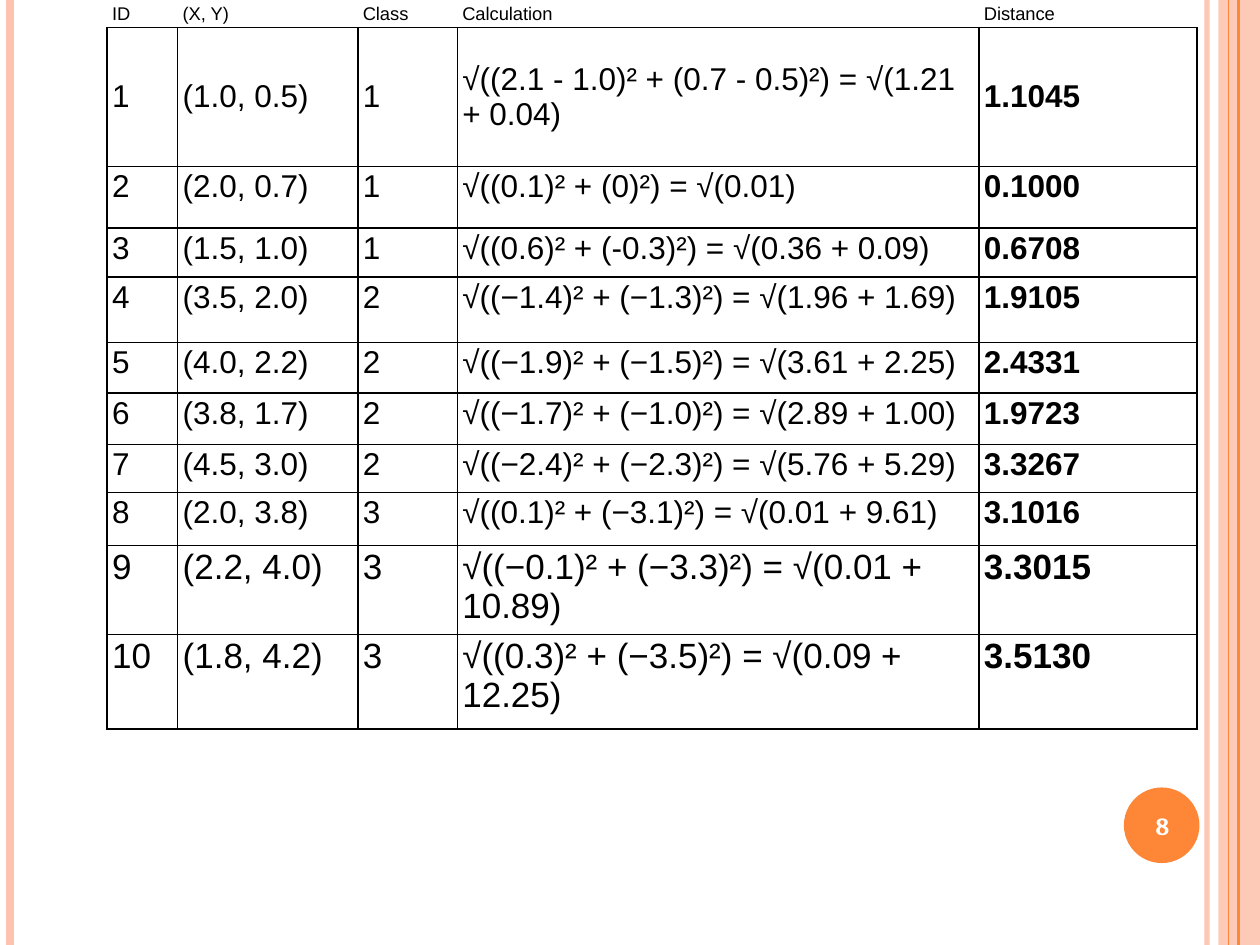
"""Build a slide with a table of point distances for a nearest-neighbour example."""
from lxml import etree
from pptx import Presentation
from pptx.dml.color import RGBColor
from pptx.enum.shapes import MSO_CONNECTOR, MSO_SHAPE
from pptx.enum.text import MSO_ANCHOR, PP_ALIGN
from pptx.oxml.ns import qn
from pptx.util import Inches, Pt

BLACK = RGBColor(0, 0, 0)
WHITE = RGBColor(255, 255, 255)
PEACH = RGBColor(0xFE, 0xC3, 0xAE)
ORANGE = RGBColor(0xFE, 0x86, 0x37)
STRAIGHT = MSO_CONNECTOR.STRAIGHT
RECT, OVAL = MSO_SHAPE.RECTANGLE, MSO_SHAPE.OVAL
MIDDLE, TOP = MSO_ANCHOR.MIDDLE, MSO_ANCHOR.TOP
CENTER = PP_ALIGN.CENTER

COLS = [0.56, 1.43, 0.79, 4.14, 1.73]
HEAD = ["ID", "(X, Y)", "Class", "Calculation", "Distance"]
ROWS = [
    (1.10, 18, ["1", "(1.0, 0.5)", "1", "√((2.1 - 1.0)² + (0.7 - 0.5)²) = √(1.21 + 0.04)", "1.1045"]),
    (0.49, 18, ["2", "(2.0, 0.7)", "1", "√((0.1)² + (0)²) = √(0.01)", "0.1000"]),
    (0.39, 18, ["3", "(1.5, 1.0)", "1", "√((0.6)² + (-0.3)²) = √(0.36 + 0.09)", "0.6708"]),
    (0.52, 18, ["4", "(3.5, 2.0)", "2", "√((−1.4)² + (−1.3)²) = √(1.96 + 1.69)", "1.9105"]),
    (0.40, 18, ["5", "(4.0, 2.2)", "2", "√((−1.9)² + (−1.5)²) = √(3.61 + 2.25)", "2.4331"]),
    (0.41, 18, ["6", "(3.8, 1.7)", "2", "√((−1.7)² + (−1.0)²) = √(2.89 + 1.00)", "1.9723"]),
    (0.38, 18, ["7", "(4.5, 3.0)", "2", "√((−2.4)² + (−2.3)²) = √(5.76 + 5.29)", "3.3267"]),
    (0.42, 18, ["8", "(2.0, 3.8)", "3", "√((0.1)² + (−3.1)²) = √(0.01 + 9.61)", "3.1016"]),
    (0.69, 20, ["9", "(2.2, 4.0)", "3", "√((−0.1)² + (−3.3)²) = √(0.01 + 10.89)", "3.3015"]),
    (0.75, 20, ["10", "(1.8, 4.2)", "3", "√((0.3)² + (−3.5)²) = √(0.09 + 12.25)", "3.5130"]),
]
GRID = [(0.22, 10.5, HEAD)] + ROWS


def fade(shape, share):
    for color in shape.element.spPr.iter(qn("a:srgbClr")):
        etree.SubElement(color, qn("a:alpha"), val=str(share * 1000))


def edge(cell, sides, shown):
    props = cell._tc.get_or_add_tcPr()
    for side in sides:
        line = etree.SubElement(props, qn("a:ln" + side), w=str(Pt(1)))
        if shown:
            fill = etree.SubElement(line, qn("a:solidFill"))
            etree.SubElement(fill, qn("a:srgbClr"), val=str(BLACK))
        else:
            etree.SubElement(line, qn("a:noFill"))


deck = Presentation()
deck.slide_width, deck.slide_height = Inches(10), Inches(7.5)
slide = deck.slides.add_slide(deck.slide_layouts[6])
shapes = slide.shapes

stripes = []
for x, color, width in [(9.58, PEACH, 3), (0.08, PEACH, 4.5), (9.83, ORANGE, 1.5)]:
    stripes.append((x, color, width))
band = shapes.add_shape(RECT, Inches(9.67), 0, Inches(0.33), Inches(7.5))
disc = shapes.add_shape(OVAL, Inches(8.92), Inches(6.25), Inches(0.6), Inches(0.6))
for shape, color in [(band, PEACH), (disc, ORANGE)]:
    shape.shadow.inherit = False
    shape.fill.solid()
    shape.fill.fore_color.rgb = color
    shape.line.fill.background()
fade(band, 87)

for x, color, width in stripes + [(9.75, ORANGE, 0.75)]:
    stripe = shapes.add_connector(STRAIGHT, Inches(x), 0, Inches(x), Inches(7.5))
    stripe.line.color.rgb = color
    stripe.line.width = Pt(width)
    etree.SubElement(stripe.element.spPr, qn("a:effectLst"))
    if x == 9.58:
        fade(stripe, 93)

label = shapes.add_textbox(Inches(8.89), Inches(6.27), Inches(0.67), Inches(0.57))
frame = label.text_frame
frame.word_wrap = True
frame.vertical_anchor = MIDDLE
para = frame.paragraphs[0]
para.alignment = CENTER
run = para.add_run()
run.text = "8"
run.font.name, run.font.size, run.font.bold = "Cambria", Pt(14), True
run.font.color.rgb = WHITE

table = shapes.add_table(
    len(GRID), len(COLS), Inches(0.85), 0, Inches(8.65), Inches(5.78)
).table
table.first_row = table.horz_banding = False
for col, width in zip(table.columns, COLS):
    col.width = Inches(width)
for r, (height, size, texts) in enumerate(GRID):
    table.rows[r].height = Inches(height)
    for c, text in enumerate(texts):
        cell = table.cell(r, c)
        cell.margin_left = cell.margin_right = Inches(0.04)
        cell.margin_top = cell.margin_bottom = Inches(0.02)
        cell.vertical_anchor = MIDDLE if r < 2 else TOP
        edge(cell, "LRT", r > 0)
        edge(cell, "B", True)
        cell.fill.background()
        run = cell.text_frame.paragraphs[0].add_run()
        run.text = text
        run.font.name, run.font.size = "Arial", Pt(size)
        run.font.bold = r > 0 and c == 4
        run.font.color.rgb = BLACK

deck.save("out.pptx")
